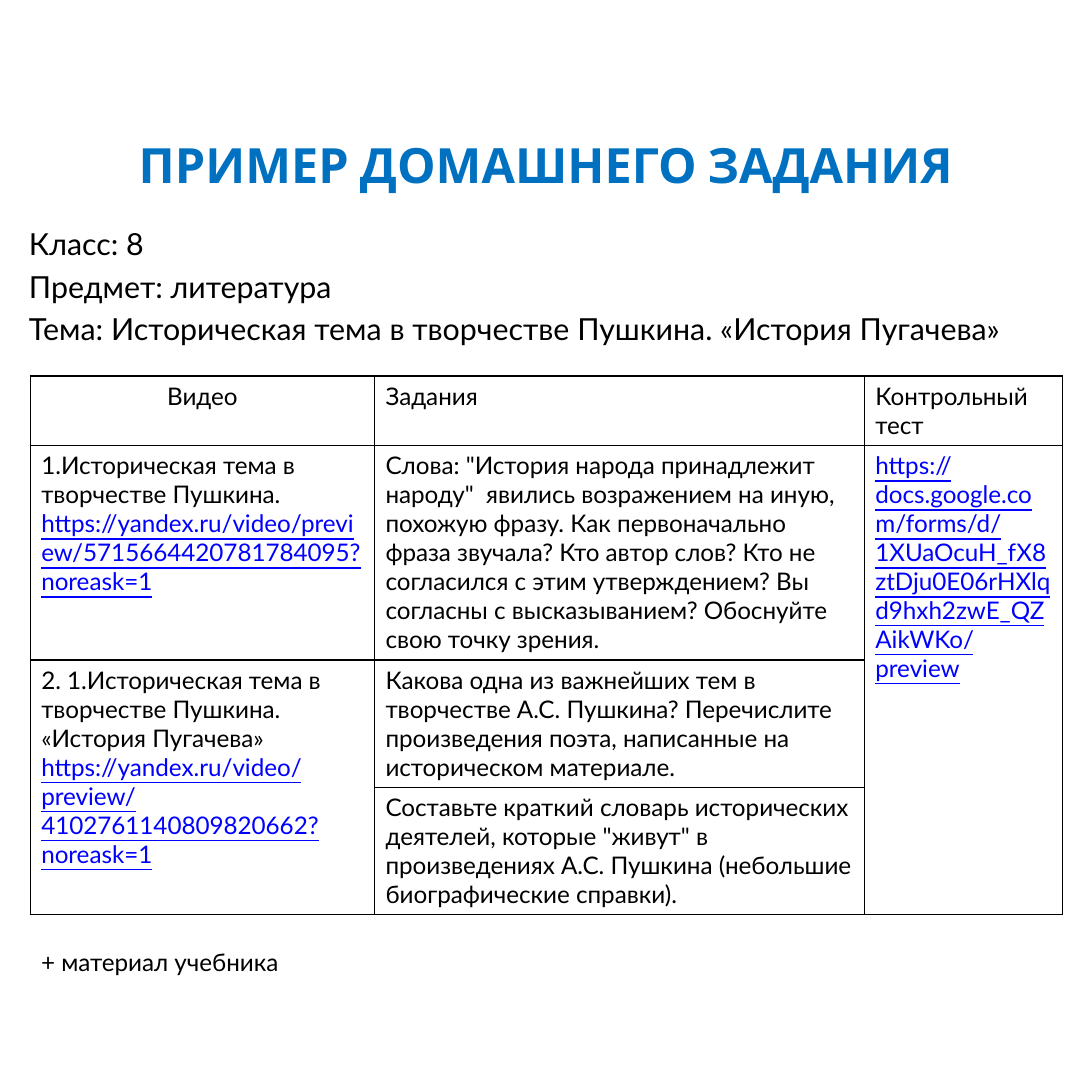
import pptx
import pptx.util
import pptx.dml.color
import pptx.enum.text
import pptx.oxml
import pptx.oxml.ns
from dataclasses import dataclass

Pt = pptx.util.Pt
Align = pptx.enum.text.PP_ALIGN
Anchor = pptx.enum.text.MSO_ANCHOR


@dataclass
class Theme:
    ink: str = "000000"
    blue: str = "0070C0"
    link: str = "0000FF"
    head: str = "Cabin"
    body: str = "Lato"
    big: int = 32
    mid: int = 20
    small: int = 16
    line: int = 1


class Page:
    def __init__(self, deck, theme):
        self.theme = theme
        self.slide = deck.slides.add_slide(deck.slide_layouts[5])

    def style(self, run, size, color, face=None, bold=False):
        font = run.font
        font.name = face or self.theme.body
        font.size = Pt(size)
        font.bold = bold
        font.color.rgb = pptx.dml.color.RGBColor.from_string(color)

    def fill(self, frame, lines, size, gap=0):
        """Write the lines; any word that is a web address looks like a link."""
        frame.word_wrap = True
        for i, line in enumerate(lines):
            para = frame.paragraphs[0] if i == 0 else frame.add_paragraph()
            para.space_before = Pt(gap if i else 0)
            start = line.find("https://")
            parts = [line] if start < 0 else [line[:start], line[start:]]
            for part in filter(None, parts):
                run = para.add_run()
                run.text = part
                web = part.startswith("https://")
                self.style(run, size, self.theme.link if web else self.theme.ink)
                run.font.underline = web

    def title(self, text, box):
        shape = self.slide.shapes.title
        shape.left, shape.top, shape.width, shape.height = map(Pt, box)
        frame = shape.text_frame
        frame.text = text
        frame.auto_size = pptx.enum.text.MSO_AUTO_SIZE.NONE
        frame.vertical_anchor = Anchor.MIDDLE
        para = frame.paragraphs[0]
        para.alignment = Align.CENTER
        self.style(para.runs[0], self.theme.big, self.theme.blue, self.theme.head, True)

    def text(self, lines, box, size, gap=0):
        shape = self.slide.shapes.add_textbox(*map(Pt, box))
        self.fill(shape.text_frame, lines, size, gap)

    def edge(self, cell):
        cell.fill.background()
        props = cell._tc.get_or_add_tcPr()
        for i, side in enumerate("LRTB"):
            props.insert(i, pptx.oxml.parse_xml(
                f'<a:ln{side} {pptx.oxml.ns.nsdecls("a")} w="{Pt(self.theme.line)}">'
                f'<a:solidFill><a:srgbClr val="{self.theme.ink}"/></a:solidFill>'
                f'</a:ln{side}>'))

    def table(self, rows, spot, wide, high, spans):
        frame = self.slide.shapes.add_table(
            len(high), len(wide), *map(Pt, (*spot, sum(wide), sum(high))))
        grid = frame.table
        grid.first_row = grid.horz_banding = False
        for col, size in zip(grid.columns, wide):
            col.width = Pt(size)
        for row, size in zip(grid.rows, high):
            row.height = Pt(size)
        for first, last in spans:
            grid.cell(*first).merge(grid.cell(*last))
        for r, row in enumerate(rows):
            for c, lines in enumerate(row):
                cell = grid.cell(r, c)
                self.edge(cell)
                if lines:
                    self.fill(cell.text_frame, lines, self.theme.small)
        return grid


def main():
    deck = pptx.Presentation()
    deck.slide_width = deck.slide_height = Pt(720)
    theme = Theme()
    page = Page(deck, theme)

    # Heading and lesson details
    page.title("ПРИМЕР ДОМАШНЕГО ЗАДАНИЯ", (1, 85, 718, 46))
    page.text(["Класс: 8", "Предмет: литература",
               "Тема: Историческая тема в творчестве Пушкина. «История Пугачева»"],
              (12, 145, 698, 386), theme.mid, gap=4)

    # Homework table
    rows = [
        [["Видео"], ["Задания"], ["Контрольный тест"]],
        [["1.Историческая тема в творчестве Пушкина. "
          "https://yandex.ru/video/preview/5715664420781784095?noreask=1"],
         ["Слова: \"История народа принадлежит народу\"  явились возражением на иную, "
          "похожую фразу. Как первоначально фраза звучала? Кто автор слов? Кто не "
          "согласился с этим утверждением? Вы согласны с высказыванием? Обоснуйте "
          "свою точку зрения."],
         ["https://docs.google.com/forms/d/"
          "1XUaOcuH_fX8ztDju0E06rHXlqd9hxh2zwE_QZAikWKo/preview"]],
        [["2. 1.Историческая тема в творчестве Пушкина. «История Пугачева»",
          "https://yandex.ru/video/preview/4102761140809820662?noreask=1"],
         ["Какова одна из важнейших тем в творчестве А.С. Пушкина? Перечислите "
          "произведения поэта, написанные на историческом материале."], None],
        [None,
         ["Составьте краткий словарь исторических деятелей, которые \"живут\" в "
          "произведениях А.С. Пушкина (небольшие биографические справки)."], None],
    ]
    grid = page.table(rows, (20, 248), (227, 323, 130.5), (45.5, 141.5, 84, 84),
                      [((1, 2), (3, 2)), ((2, 0), (3, 0))])
    grid.cell(0, 0).text_frame.paragraphs[0].alignment = Align.CENTER

    # Closing note
    page.text(["+ материал учебника"], (20, 621, 459, 27), theme.small)

    deck.save("out.pptx")


if __name__ == "__main__":
    main()
